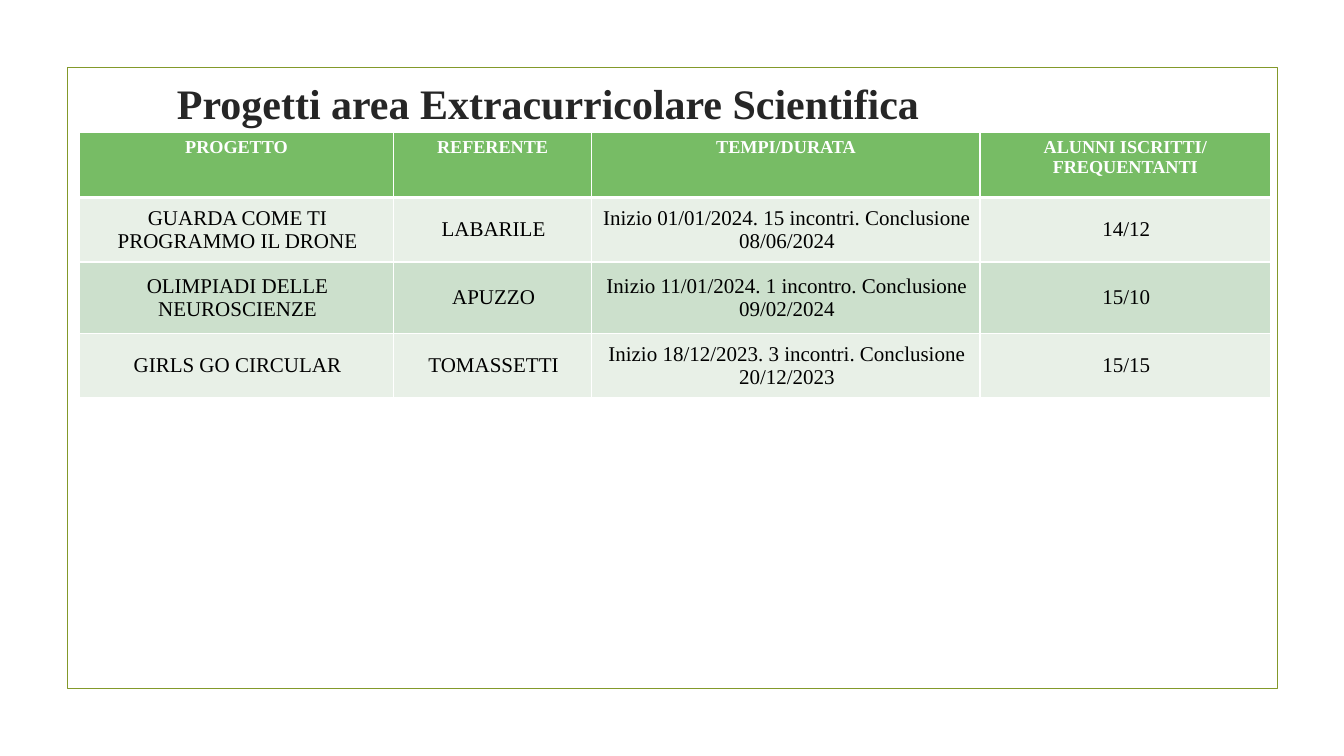
"""Build the slide listing the extracurricular science projects."""
from lxml.etree import SubElement
from pptx import Presentation
from pptx.dml.color import RGBColor
from pptx.enum.shapes import MSO_SHAPE
from pptx.enum.text import MSO_ANCHOR, PP_ALIGN
from pptx.oxml.ns import qn
from pptx.util import Inches, Pt

TITLE = "Progetti area Extracurricolare Scientifica"
HEADER = ["PROGETTO", "REFERENTE", "TEMPI/DURATA", "ALUNNI ISCRITTI/\nFREQUENTANTI"]
PROJECTS = [
    ["GUARDA COME TI PROGRAMMO IL DRONE", "LABARILE",
     "Inizio 01/01/2024. 15 incontri. Conclusione 08/06/2024", "14/12"],
    ["OLIMPIADI DELLE NEUROSCIENZE", "APUZZO",
     "Inizio 11/01/2024. 1 incontro. Conclusione 09/02/2024", "15/10"],
    ["GIRLS GO CIRCULAR", "TOMASSETTI",
     "Inizio 18/12/2023. 3 incontri. Conclusione 20/12/2023", "15/15"],
]
COLUMN_WIDTHS = [3.11, 1.97, 3.85, 2.88]
ROW_HEIGHTS = [0.65, 0.64, 0.71, 0.64]
BAND_FILLS = ["E8F0E7", "CCE0CC"]
HEADER_FILL = "77BC65"
FONT = "Times New Roman"


def color(value):
    return RGBColor.from_string(value)


def write(frame, text, size, ink, bold):
    frame.text = text
    for para in frame.paragraphs:
        para.alignment = PP_ALIGN.CENTER
        for span in para.runs:
            span.font.name = FONT
            span.font.size = Pt(size)
            span.font.bold = bold
            span.font.color.rgb = color(ink)


def add_borders(cell, top, bottom):
    properties = cell._tc.get_or_add_tcPr()
    for side, width in [("L", 0.96), ("R", 0.96), ("T", top), ("B", bottom)]:
        line = SubElement(properties, qn(f"a:ln{side}"), w=str(int(Pt(width))))
        fill = SubElement(line, qn("a:solidFill"))
        SubElement(fill, qn("a:srgbClr"), val="FFFFFF")


def add_frame(page):
    frame = page.shapes.add_shape(
        MSO_SHAPE.RECTANGLE, Inches(0.67), Inches(0.67), Inches(12), Inches(6.16))
    frame.shadow.inherit = False
    frame.fill.background()
    frame.line.color.rgb = color("83992A")
    frame.line.width = Pt(1.25)


def add_title(page):
    box = page.shapes.add_textbox(Inches(0.74), Inches(0.67), Inches(9.4), Inches(0.69))
    box.text_frame.word_wrap = True
    box.text_frame.vertical_anchor = MSO_ANCHOR.MIDDLE
    write(box.text_frame, TITLE, 30, "262626", True)


def add_projects(page):
    rows = [HEADER] + PROJECTS
    table = page.shapes.add_table(
        len(rows), len(HEADER), Inches(0.79), Inches(1.31),
        Inches(sum(COLUMN_WIDTHS)), Inches(sum(ROW_HEIGHTS))).table
    for column, width in zip(table.columns, COLUMN_WIDTHS):
        column.width = Inches(width)
    for index, (texts, height) in enumerate(zip(rows, ROW_HEIGHTS)):
        table.rows[index].height = Inches(height)
        for cell, text in zip(table.rows[index].cells, texts):
            add_borders(cell, 3 if index == 1 else 0.96, 3 if index == 0 else 0.96)
            cell.fill.solid()
            if index == 0:
                cell.fill.fore_color.rgb = color(HEADER_FILL)
                write(cell.text_frame, text, 13, "FFFFFF", True)
            else:
                cell.fill.fore_color.rgb = color(BAND_FILLS[(index - 1) % 2])
                cell.vertical_anchor = MSO_ANCHOR.MIDDLE
                cell.margin_left, cell.margin_right = Inches(0.04), Inches(0.02)
                write(cell.text_frame, text, 15, "000000", False)


def main():
    deck = Presentation()
    deck.slide_width, deck.slide_height = Inches(13.33), Inches(7.5)
    page = deck.slides.add_slide(deck.slide_layouts[6])
    add_frame(page)
    add_title(page)
    add_projects(page)
    deck.save("out.pptx")


if __name__ == "__main__":
    main()
